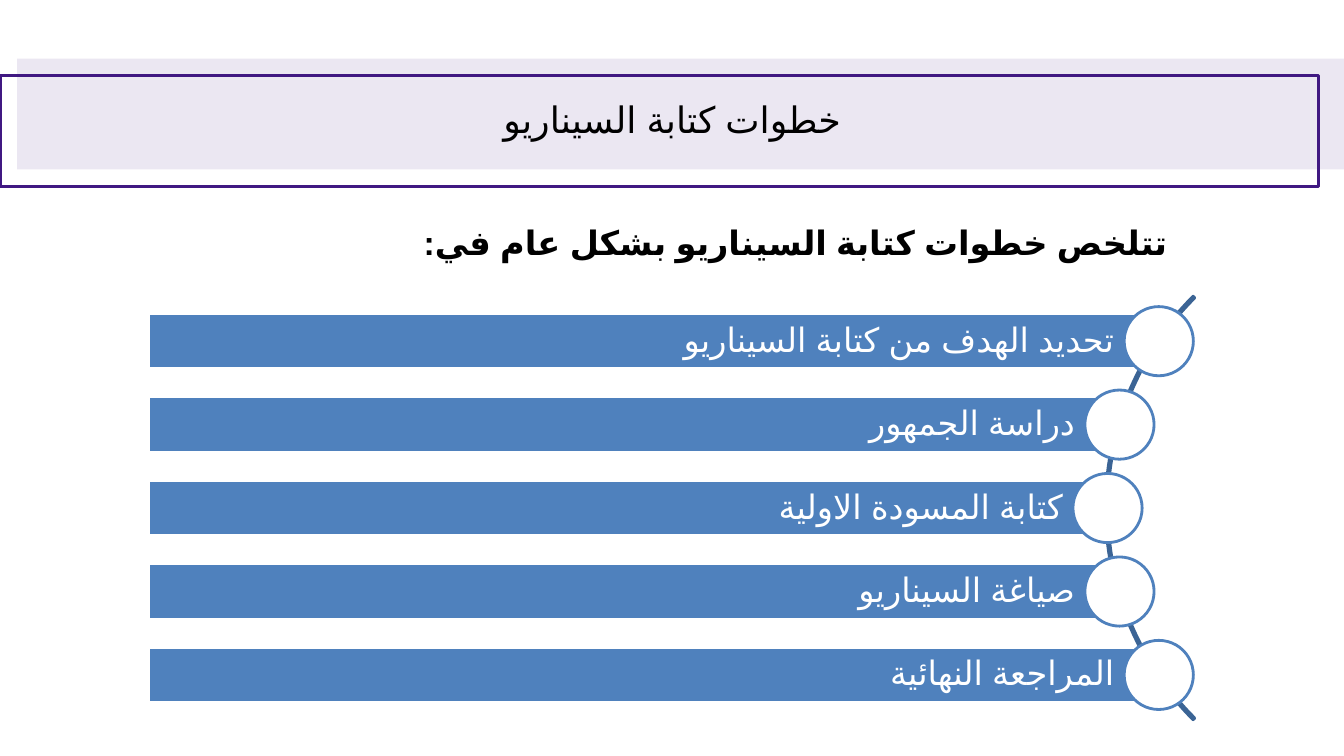
import math

import pptx
import pptx.dml.color
import pptx.enum.lang
import pptx.enum.shapes
import pptx.enum.text
import pptx.oxml.ns
import pptx.util
from lxml import etree

Pt = pptx.util.Pt
SHAPE = pptx.enum.shapes.MSO_SHAPE
ALIGN = pptx.enum.text.PP_ALIGN
FONT = "Arial"
PURPLE, BLUE, DARK_BLUE = "401882", "4F81BD", "3B6495"
BLACK, WHITE = "000000", "FFFFFF"

TITLE = "خطوات كتابة السيناريو"
INTRO = "تتلخص خطوات كتابة السيناريو بشكل عام في:"
STEPS = [
    "تحديد الهدف من كتابة السيناريو",
    "دراسة الجمهور",
    "كتابة المسودة الاولية",
    "صياغة السيناريو",
    "المراجعة النهائية",
]


def rgb(code):
    return pptx.dml.color.RGBColor.from_string(code)


def add_part(slide, kind, box, fill=None, line=None, width=2):
    part = slide.shapes.add_shape(kind, *(Pt(length) for length in box))
    part.shadow.inherit = False
    if fill:
        part.fill.solid()
        part.fill.fore_color.rgb = rgb(fill)
    else:
        part.fill.background()
    if line:
        part.line.color.rgb = rgb(line)
        part.line.width = Pt(width)
    else:
        part.line.fill.background()
    return part


def write(frame, words, size, color, align, spacing=1.0, bold=False, insets=(7.2, 3.6, 7.2, 3.6)):
    frame.word_wrap = True
    frame.vertical_anchor = pptx.enum.text.MSO_ANCHOR.MIDDLE
    frame.margin_left, frame.margin_top, frame.margin_right, frame.margin_bottom = map(Pt, insets)
    paragraph = frame.paragraphs[0]
    paragraph.alignment = align
    paragraph.line_spacing = spacing
    paragraph.space_before = Pt(0)
    paragraph._p.get_or_add_pPr().set("rtl", "1")
    run = paragraph.add_run()
    run.text = words
    run.font.size = Pt(size)
    run.font.bold = bold
    run.font.name = FONT
    run.font.color.rgb = rgb(color)
    run.font.language_id = pptx.enum.lang.MSO_LANGUAGE_ID.ARABIC
    complex_script = etree.SubElement(run._r.get_or_add_rPr(), pptx.oxml.ns.qn("a:cs"))
    complex_script.set("typeface", FONT)


def add_banner(slide, left, top, width, height):
    offset = 12.2
    band = add_part(slide, SHAPE.RECTANGLE,
                    (left + offset, top, width - offset, height), PURPLE)
    tint = band.fill._xPr.find(".//" + pptx.oxml.ns.qn("a:srgbClr"))
    etree.SubElement(tint, pptx.oxml.ns.qn("a:alpha")).set("val", "10000")
    add_part(slide, SHAPE.RECTANGLE,
             (left, top + offset, width - 18, height), line=PURPLE, width=2.25)

    title = slide.shapes.title
    title.left, title.top = Pt(left + 151.2), Pt(top + offset)
    title.width, title.height = Pt(658), Pt(61.2)
    title._element.getparent().append(title._element)
    write(title.text_frame, TITLE, 26, BLACK, ALIGN.CENTER)


def add_intro(slide, left, top, width, height):
    intro = slide.shapes.add_textbox(Pt(left), Pt(top), Pt(width), Pt(height))
    write(intro.text_frame, INTRO, 24, BLACK, ALIGN.RIGHT, spacing=1.5, bold=True)
    intro.text_frame.vertical_anchor = pptx.enum.text.MSO_ANCHOR.TOP


def add_steps(slide, left, top, width, height):
    arc_radius, node_radius = 213.9, 212.4
    bar_height, circle = 39.5, 49.4
    center_x, center_y = left + width + 143.6, top + height / 2
    pitch = height / len(STEPS)

    arc = add_part(slide, SHAPE.BLOCK_ARC,
                   (center_x - arc_radius, center_y - arc_radius,
                    2 * arc_radius, 2 * arc_radius), line=DARK_BLUE)
    for position, value in enumerate((81, 135, 0.004)):
        arc.adjustments[position] = value

    for index, step in enumerate(STEPS):
        rise = (index - (len(STEPS) - 1) / 2) * pitch
        node_x = center_x - math.sqrt(node_radius ** 2 - rise ** 2)
        node_y = center_y + rise
        bar = add_part(slide, SHAPE.RECTANGLE,
                       (left, node_y - bar_height / 2, node_x - left, bar_height),
                       BLUE, WHITE)
        write(bar.text_frame, step, 24, WHITE, ALIGN.RIGHT, spacing=0.9,
              insets=(5, 5, 31.7, 5))
        add_part(slide, SHAPE.OVAL,
                 (node_x - circle / 2, node_y - circle / 2, circle, circle),
                 WHITE, BLUE)


def main():
    presentation = pptx.Presentation()
    presentation.slide_width, presentation.slide_height = Pt(960), Pt(540)
    slide = presentation.slides.add_slide(presentation.slide_layouts[5])
    add_banner(slide, 0, 41.9, 960, 79.2)
    add_intro(slide, 154.8, 140.4, 686.2, 47.5)
    add_steps(slide, 105.9, 213.9, 754, 298)
    presentation.save("out.pptx")


if __name__ == "__main__":
    main()
